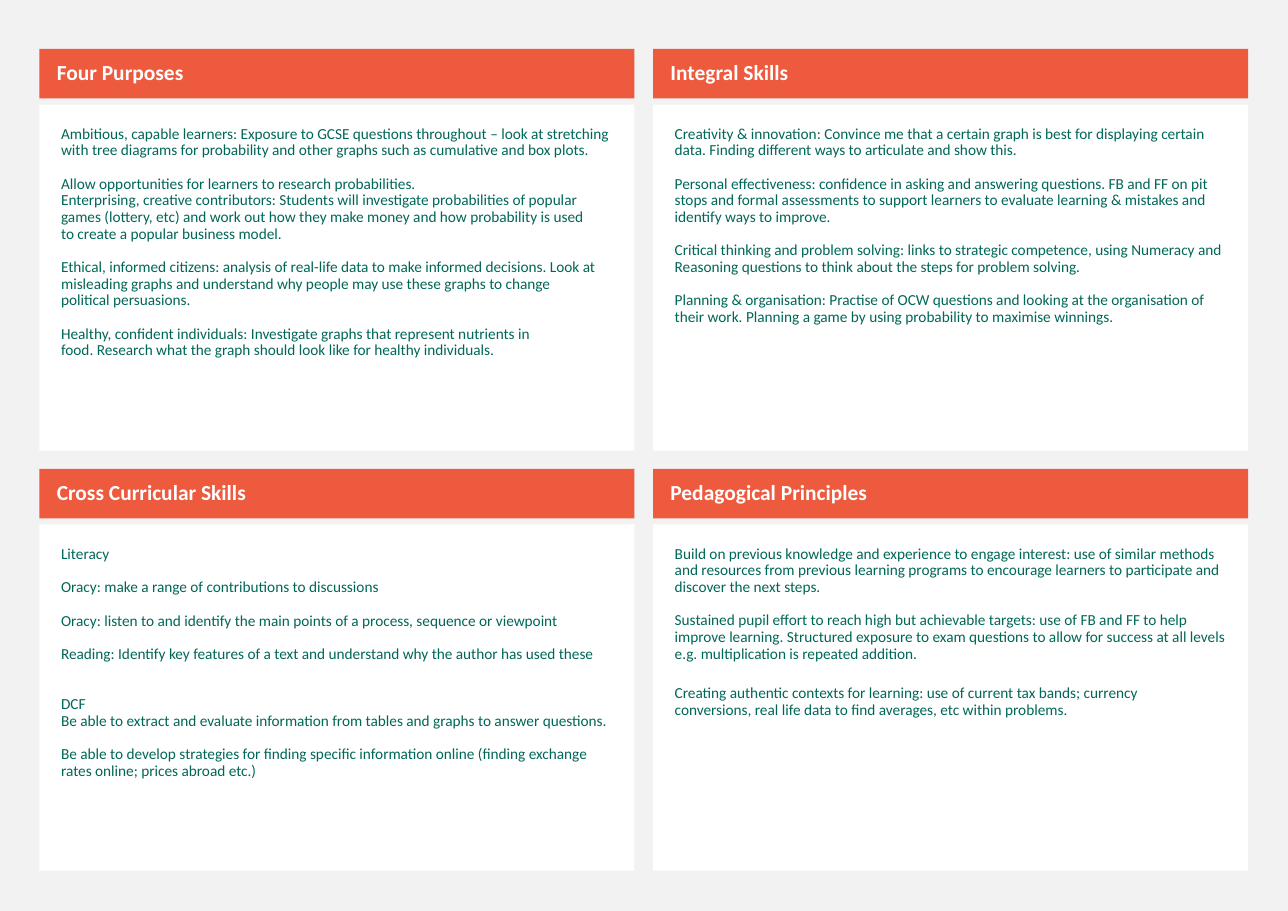
from pptx import Presentation
from pptx.dml.color import RGBColor
from pptx.enum.shapes import MSO_SHAPE
from pptx.enum.text import MSO_ANCHOR, PP_ALIGN
from pptx.util import Cm, Pt

RECT = MSO_SHAPE.RECTANGLE
TOP, MIDDLE = MSO_ANCHOR.TOP, MSO_ANCHOR.MIDDLE
LEFT_ALIGN = PP_ALIGN.LEFT
NO_BREAK_SPACE = chr(160)

LEFT, COLUMN_STEP, CARD_W = 0.91, 14.15, 13.72
HEADER_TOP, ROW_STEP, HEADER_H = 1.13, 9.68, 1.14
BODY_OFFSET, BODY_H = 1.28, 7.98
GAP = 11

CARDS = [
    ("Four Purposes", [
        (0, "Ambitious, capable learners: Exposure to GCSE questions throughout – look at stretching with tree diagrams for probability and other graphs such as cumulative and box plots."),
        (GAP, "Allow opportunities for learners to research probabilities."),
        (0, "Enterprising, creative contributors: Students will investigate probabilities of popular games (lottery, etc) and work out how they make money and how probability is used to~create a popular business model."),
        (GAP, "Ethical, informed citizens: analysis of real-life data to make informed decisions. Look at misleading graphs and understand why people may use these graphs to change political~persuasions."),
        (GAP, "Healthy, confident individuals: Investigate graphs that represent nutrients in food.~Research what the graph should look like for healthy individuals."),
    ]),
    ("Integral Skills", [
        (0, "Creativity & innovation: Convince me that a certain graph is best for displaying certain data. Finding different ways to articulate and show this."),
        (GAP, "Personal effectiveness: confidence in asking and answering questions. FB and FF on pit stops and formal assessments to support learners to evaluate learning & mistakes and identify ways to improve."),
        (GAP, "Critical thinking and problem solving: links to strategic competence, using Numeracy and Reasoning questions to think about the steps for problem solving."),
        (GAP, "Planning & organisation: Practise of OCW questions and looking at the organisation of their work. Planning a game by using probability to maximise winnings."),
    ]),
    ("Cross Curricular Skills", [
        (0, "Literacy"),
        (GAP, "Oracy: make a range of contributions to discussions"),
        (GAP, "Oracy: listen to and identify the main points of a process, sequence or viewpoint"),
        (GAP, "Reading: Identify key features of a text and understand why the author has used these"),
        (2 * GAP, "DCF"),
        (0, "Be able to extract and evaluate information from tables and graphs to answer questions."),
        (GAP, "Be able to develop strategies for finding specific information online (finding exchange rates online; prices abroad etc.)"),
    ]),
    ("Pedagogical Principles", [
        (0, "Build on previous knowledge and experience to engage interest: use of similar methods and resources from previous learning programs to encourage learners to participate and discover the next steps."),
        (GAP, "Sustained pupil effort to reach high but achievable targets: use of FB and FF to help improve learning. Structured exposure to exam questions to allow for success at all levels e.g. multiplication is repeated addition."),
        (15, "Creating authentic contexts for learning: use of current tax bands; currency conversions,~real~life~data to find averages, etc within problems."),
    ]),
]


def rgb(value):
    return RGBColor.from_string(value)


def add_panel(x, y, height, fill, paragraphs, size, color, bold, anchor, insets):
    sp = s.shapes.add_shape(RECT, Cm(x), Cm(y), Cm(CARD_W), Cm(height))
    sp.shadow.inherit = False
    sp.fill.solid()
    sp.fill.fore_color.rgb = rgb(fill)
    sp.line.fill.background()
    tf = sp.text_frame
    tf.word_wrap = True
    tf.vertical_anchor = anchor
    tf.margin_left, tf.margin_top, tf.margin_right, tf.margin_bottom = [Cm(v) for v in insets]
    for i, (space, text) in enumerate(paragraphs):
        p = tf.add_paragraph() if i else tf.paragraphs[0]
        p.text = text.replace("~", NO_BREAK_SPACE)
        p.alignment = LEFT_ALIGN
        p.line_spacing = 0.9
        p.space_before = Pt(space)
        p.font.name = "Calibri"
        p.font.size = Pt(size)
        p.font.bold = bold
        p.font.color.rgb = rgb(color)


prs = Presentation()
prs.slide_width, prs.slide_height = Cm(29.7), Cm(21)
s = prs.slides.add_slide(prs.slide_layouts[6])
s.background.fill.solid()
s.background.fill.fore_color.rgb = rgb("F2F2F2")

for i, (title, paragraphs) in enumerate(CARDS):
    row, column = divmod(i, 2)
    x = LEFT + column * COLUMN_STEP
    y = HEADER_TOP + row * ROW_STEP
    add_panel(x, y + BODY_OFFSET, BODY_H, "FFFFFF", paragraphs,
              10, "006758", False, TOP, (0.5, 0.5, 0.5, 0.5))
    add_panel(x, y, HEADER_H, "ED5A3E", [(0, title)],
              14, "FFFFFF", True, MIDDLE, (0.4, 0.13, 0.25, 0.13))

prs.save("out.pptx")
